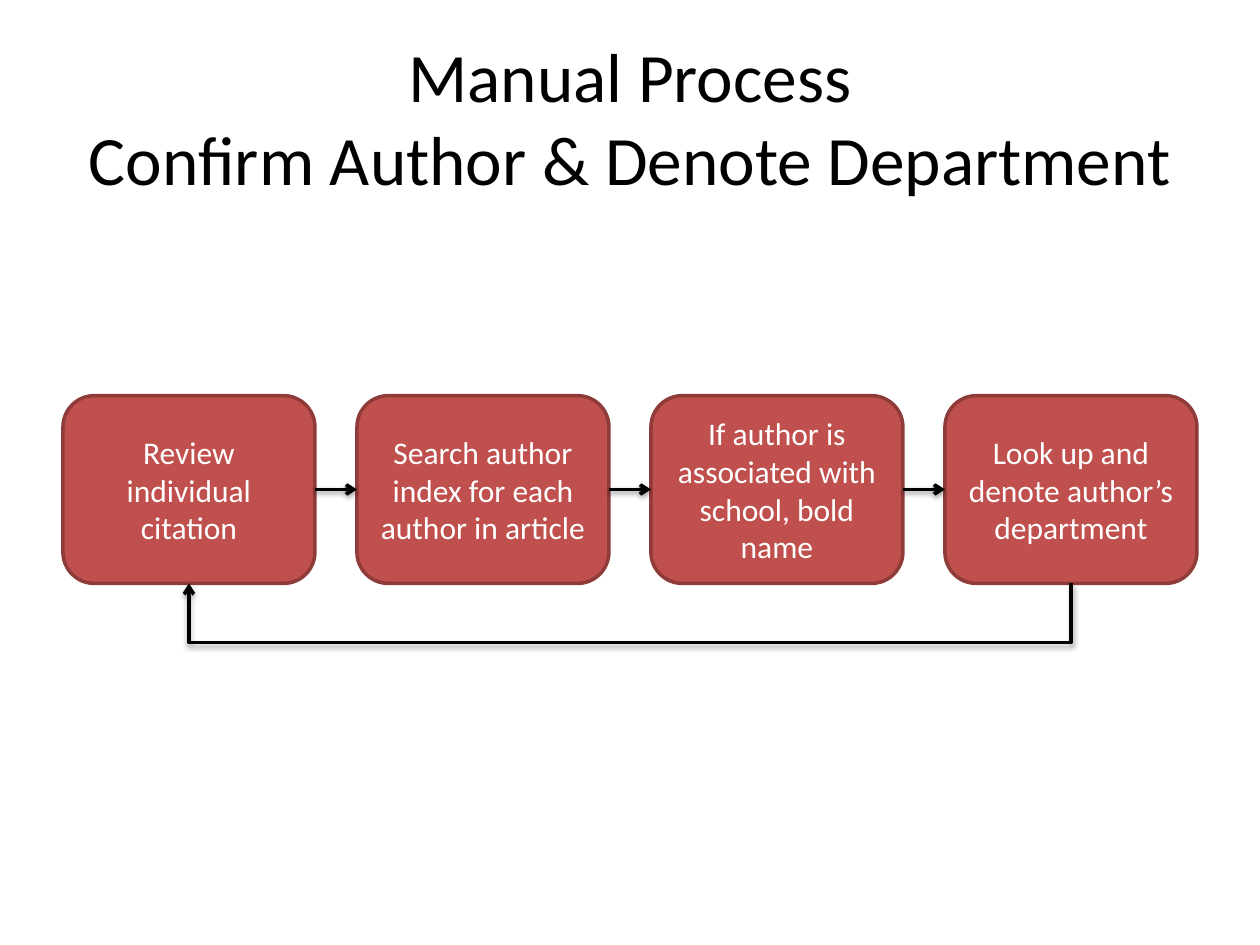
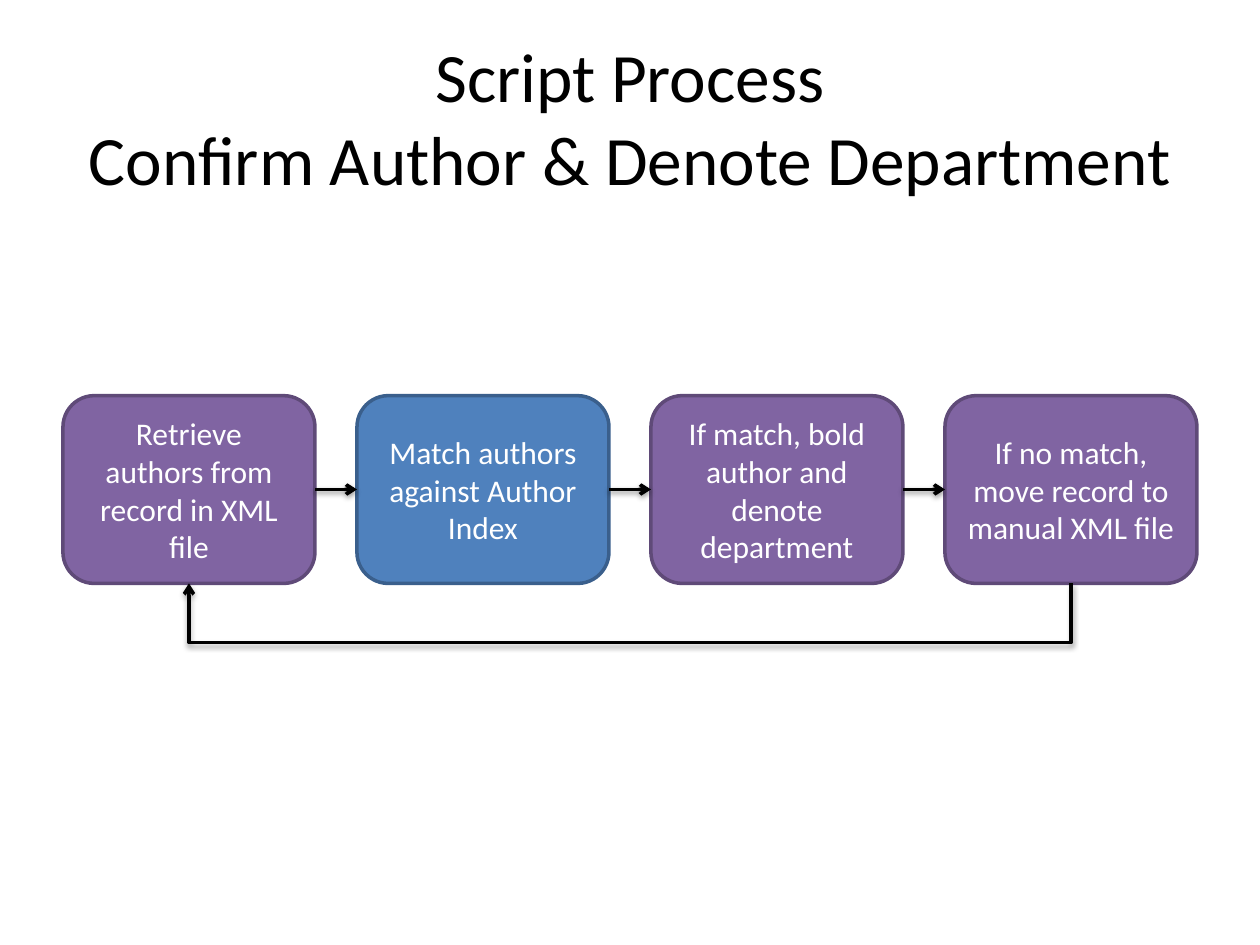
from lxml import etree
from pptx import Presentation
from pptx.dml.color import RGBColor
from pptx.enum.shapes import MSO_CONNECTOR, MSO_SHAPE
from pptx.enum.text import MSO_ANCHOR, PP_ALIGN
from pptx.oxml.ns import qn
from pptx.util import Inches, Pt

ROUNDED = MSO_SHAPE.ROUNDED_RECTANGLE
STRAIGHT = MSO_CONNECTOR.STRAIGHT
MIDDLE, CENTER = MSO_ANCHOR.MIDDLE, PP_ALIGN.CENTER
LEFT_SITE, RIGHT_SITE = 1, 3

# Content: title lines, then (step text, kind)
SUBTITLE = "Confirm Author & Denote Department"
SLIDES = [
    ("Manual Process", [
        ("Review individual citation", "manual"),
        ("Search author index for each author in article", "manual"),
        ("If author is associated with school, bold name", "manual"),
        ("Look up and denote author’s department", "manual"),
    ]),
    ("Script Process", [
        ("Retrieve authors from record in XML file", "script"),
        ("Match authors against Author Index", "index"),
        ("If match, bold author and denote department", "script"),
        ("If no match, move record to manual XML file", "script"),
    ]),
]

# Shared style
COLORS = {
    "text": "000000", "step_text": "FFFFFF", "arrow": "000000",
    "manual": "C0504D", "manual_line": "8E3B39",
    "script": "8064A2", "script_line": "5F4A78",
    "index": "4F81BD", "index_line": "3A5F8C",
}
TITLE_FONT = {"name": "Calibri", "size": Pt(39.6)}
STEP_FONT = {"name": "Calibri", "size": Pt(18)}
LINE_WIDTH = Pt(2)
SHADOW = {"blurRad": Pt(3.1), "dist": Pt(1.6), "dir": 90 * 60000,
          "rotWithShape": 0}
SHADOW_ALPHA = 38000

# Layout in inches
SLIDE_W, SLIDE_H = 10, 7.5
MARGIN = 0.5
TITLE_TOP, TITLE_H = 0.3, 1.25
STEP_W, STEP_H, STEP_TOP = 2, 1.49, 3.14
LOOP_Y = 5.1


def rgb(name):
    return RGBColor.from_string(COLORS[name])


def write(sp, text, font, color):
    tf = sp.text_frame
    tf.word_wrap = True
    tf.vertical_anchor = MIDDLE
    p = tf.paragraphs[0]
    p.text = text
    p.alignment = CENTER
    for r in p.runs:
        for key, value in font.items():
            setattr(r.font, key, value)
        r.font.color.rgb = rgb(color)


def add_title(s, text):
    sp = s.shapes.add_textbox(Inches(MARGIN), Inches(TITLE_TOP),
                              Inches(SLIDE_W - 2 * MARGIN), Inches(TITLE_H))
    write(sp, text, TITLE_FONT, "text")


def add_step(s, left, text, kind):
    sp = s.shapes.add_shape(ROUNDED, Inches(left), Inches(STEP_TOP),
                            Inches(STEP_W), Inches(STEP_H))
    sp.shadow.inherit = False
    sp.fill.solid()
    sp.fill.fore_color.rgb = rgb(kind)
    sp.line.color.rgb = rgb(kind + "_line")
    sp.line.width = LINE_WIDTH
    write(sp, text, STEP_FONT, "step_text")
    return sp


def style_arrow(sp):
    """Black line with an open arrowhead and a soft shadow below."""
    sp.line.color.rgb = rgb("arrow")
    sp.line.width = LINE_WIDTH
    sp_pr = sp.line._get_or_add_ln().getparent()
    etree.SubElement(sp_pr.find(qn("a:ln")), qn("a:tailEnd"), type="arrow")
    effects = etree.SubElement(sp_pr, qn("a:effectLst"))
    shadow = etree.SubElement(effects, qn("a:outerShdw"),
                              {key: str(value) for key, value in SHADOW.items()})
    color = etree.SubElement(shadow, qn("a:srgbClr"), val=COLORS["arrow"])
    etree.SubElement(color, qn("a:alpha"), val=str(SHADOW_ALPHA))


def add_step_arrow(s, source, target):
    cx = s.shapes.add_connector(STRAIGHT, 0, 0, 0, 0)
    cx.begin_connect(source, RIGHT_SITE)
    cx.end_connect(target, LEFT_SITE)
    style_arrow(cx)


def add_loop_arrow(s, first, last):
    """Path from below the last step back up to the first step."""
    start_x, end_x = (sp.left + sp.width // 2 for sp in (last, first))
    bottom, loop_y = first.top + first.height, Inches(LOOP_Y)
    path = s.shapes.build_freeform(start_x, bottom)
    path.add_line_segments([(start_x, loop_y), (end_x, loop_y),
                            (end_x, bottom)], close=False)
    sp = path.convert_to_shape()
    sp.fill.background()
    style_arrow(sp)


def build_slide(prs, title, steps):
    s = prs.slides.add_slide(prs.slide_layouts[6])
    add_title(s, f"{title}\n{SUBTITLE}")
    pitch = (SLIDE_W - 2 * MARGIN - STEP_W) / (len(steps) - 1)
    boxes = [add_step(s, MARGIN + i * pitch, text, kind)
             for i, (text, kind) in enumerate(steps)]
    for source, target in zip(boxes, boxes[1:]):
        add_step_arrow(s, source, target)
    add_loop_arrow(s, boxes[0], boxes[-1])


def main():
    prs = Presentation()
    prs.slide_width, prs.slide_height = Inches(SLIDE_W), Inches(SLIDE_H)
    for title, steps in SLIDES:
        build_slide(prs, title, steps)
    prs.save("out.pptx")


if __name__ == "__main__":
    main()
